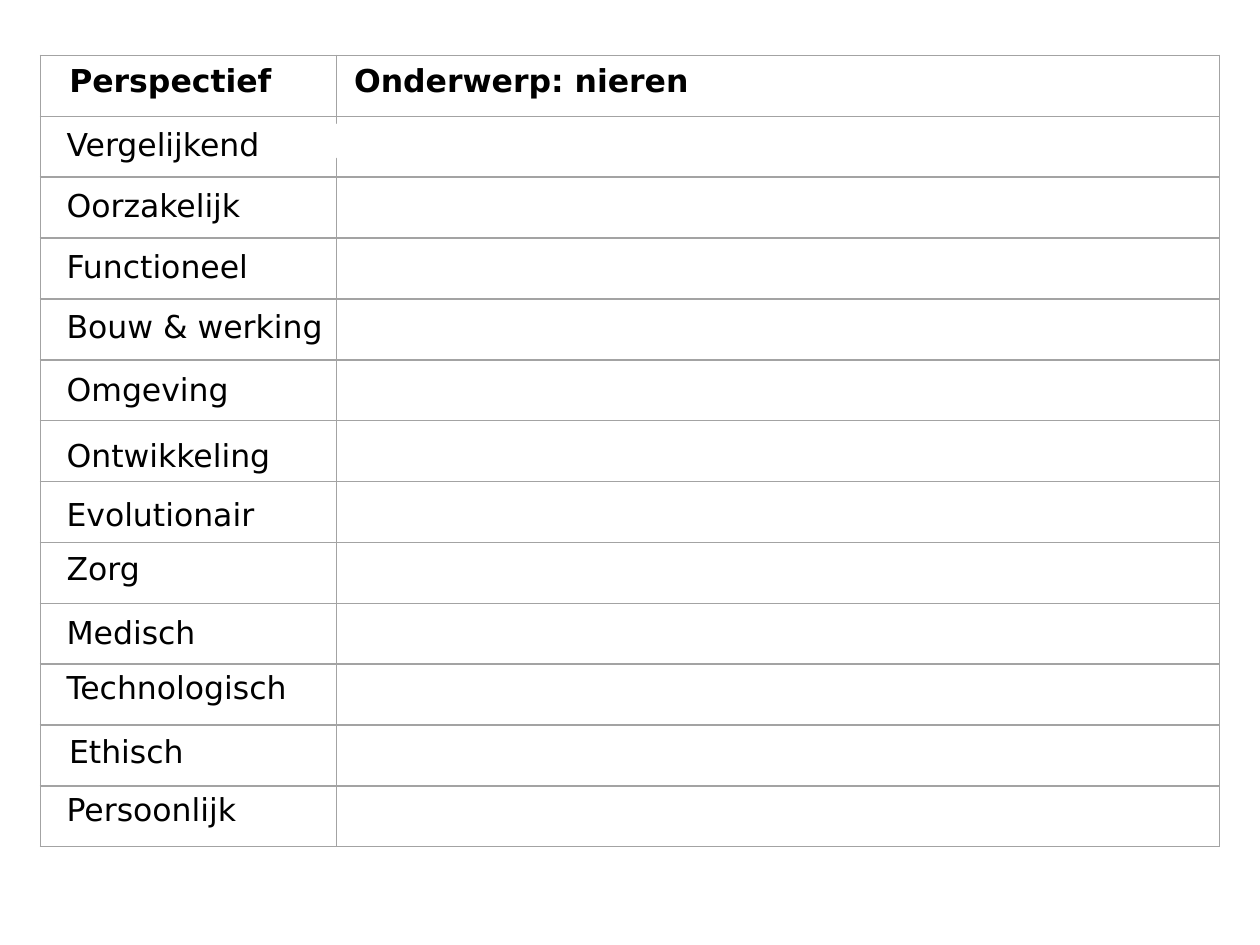
"""Build a worksheet table of perspectives on the kidneys."""
from lxml.etree import SubElement
from pptx import Presentation
from pptx.dml.color import RGBColor
from pptx.enum.shapes import MSO_SHAPE
from pptx.enum.text import MSO_AUTO_SIZE
from pptx.oxml.ns import qn
from pptx.util import Inches, Pt

FONT, BLACK, WHITE, GREY = "DejaVu Sans", "000000", "FFFFFF", "A3A3A3"
LEFT, TOP, TALL = 0.32, 0.44, 6.28
COLS = (2.35, 7.01)
HEADS = [("Perspectief", 0.23), ("Onderwerp: nieren", 0.14)]
LABELS = [
    ("Vergelijkend", 0.43, 0.94, 2.12),
    ("Oorzakelijk", 0.43, 1.43, 1.94),
    ("Functioneel", 0.43, 1.91, 1.98),
    ("Bouw & werking", 0.43, 2.39, 2.7),
    ("Omgeving", 0.43, 2.89, 1.78),
    ("Ontwikkeling", 0.43, 3.41, 2.2),
    ("Evolutionair", 0.43, 3.88, 2.03),
    ("Zorg", 0.43, 4.31, 0.94),
    ("Medisch", 0.43, 4.82, 1.45),
    ("Technologisch", 0.43, 5.25, 2.34),
    ("Ethisch", 0.45, 5.76, 1.33),
    ("Persoonlijk", 0.43, 6.22, 1.89),
]
PANELS = [
    (2.68, 0.99, 6.89, 0.26),
    (2.75, 1.49, 6.82, 0.37),
    (2.72, 1.92, 6.94, 0.32),
    (2.77, 2.45, 6.85, 0.36),
    (2.76, 3, 6.81, 0.29),
    (2.71, 3.4, 6.81, 0.32),
    (2.77, 3.9, 6.89, 0.37),
    (2.72, 4.35, 6.8, 0.27),
    (2.77, 4.85, 6.8, 0.29),
    (2.72, 5.41, 6.8, 0.27),
    (2.78, 5.78, 6.82, 0.38),
    (2.75, 6.27, 6.77, 0.34),
]


def paint(color, code):
    color.rgb = RGBColor.from_string(code)


def fill(part, code):
    part.fill.solid()
    paint(part.fill.fore_color, code)


def write(frame, text, bold=False):
    frame.text = text
    font = frame.paragraphs[0].runs[0].font
    font.name, font.size, font.bold = FONT, Pt(18), bold
    paint(font.color, BLACK)


def frame_cell(cell):
    props = cell._tc.get_or_add_tcPr()
    for side in ("lnL", "lnR", "lnT", "lnB"):
        line = SubElement(props, qn(f"a:{side}"), w=str(Pt(1)))
        solid = SubElement(line, qn("a:solidFill"))
        SubElement(solid, qn("a:srgbClr"), val=GREY)
    fill(cell, WHITE)
    cell.margin_left = cell.margin_right = Inches(0.06)
    cell.margin_top = cell.margin_bottom = Inches(0.06)


def add_grid(shapes):
    count = len(LABELS) + 1
    box = map(Inches, (LEFT, TOP, sum(COLS), TALL))
    table = shapes.add_table(count, len(COLS), *box).table
    table.first_row = table.horz_banding = False
    for col, wide in zip(table.columns, COLS):
        col.width = Inches(wide)
    for row in table.rows:
        row.height = Inches(TALL / count)
    for cell in table.iter_cells():
        frame_cell(cell)
    for i, (text, inset) in enumerate(HEADS):
        cell = table.cell(0, i)
        cell.margin_left = Inches(inset)
        write(cell.text_frame, text, True)


def add_label(shapes, text, x, y, wide):
    frame = shapes.add_textbox(*map(Inches, (x, y, wide, 0.4))).text_frame
    frame.word_wrap = True
    frame.auto_size = MSO_AUTO_SIZE.SHAPE_TO_FIT_TEXT
    write(frame, text)


def add_panel(shapes, box):
    panel = shapes.add_shape(MSO_SHAPE.RECTANGLE, *map(Inches, box))
    panel.shadow.inherit = False
    fill(panel, WHITE)
    paint(panel.line.color, WHITE)
    panel.line.width = Pt(2)


def main():
    deck = Presentation()
    deck.slide_width, deck.slide_height = Inches(10), Inches(7.5)
    shapes = deck.slides.add_slide(deck.slide_layouts[6]).shapes
    add_grid(shapes)
    for label in LABELS:
        add_label(shapes, *label)
    for box in PANELS:
        add_panel(shapes, box)
    deck.save("out.pptx")


if __name__ == "__main__":
    main()
